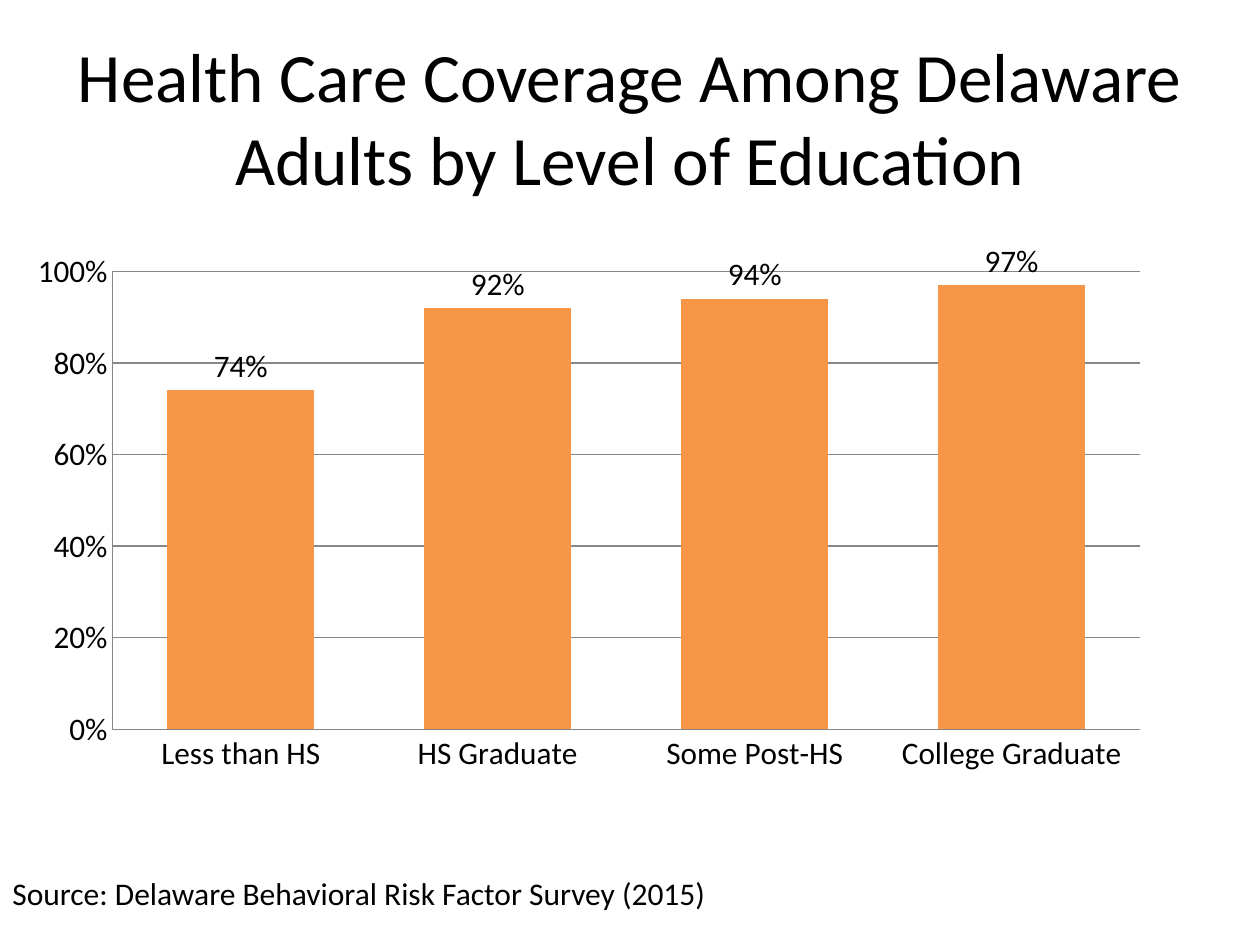
from lxml import etree
from pptx import Presentation
from pptx.chart.data import CategoryChartData
from pptx.dml.color import RGBColor
from pptx.enum.chart import XL_CHART_TYPE, XL_LABEL_POSITION, XL_TICK_MARK
from pptx.enum.text import MSO_ANCHOR, PP_ALIGN
from pptx.util import Cm, Pt

COLUMNS = XL_CHART_TYPE.COLUMN_CLUSTERED
OUTSIDE = XL_LABEL_POSITION.OUTSIDE_END
NO_TICK = XL_TICK_MARK.NONE
LEFT, CENTER = PP_ALIGN.LEFT, PP_ALIGN.CENTER
MIDDLE, BOTTOM = MSO_ANCHOR.MIDDLE, MSO_ANCHOR.BOTTOM

FONT = "Calibri"
BLACK, ORANGE, GRAY = "000000", "F79646", "878787"
COVERAGE = {
    "Less than HS": 0.74,
    "HS Graduate": 0.92,
    "Some Post-HS": 0.94,
    "College Graduate": 0.97,
}
PLOT_AREA = {"x": 0.057, "y": 0.044, "w": 0.915, "h": 0.737}


def rgb(color):
    return RGBColor.from_string(color)


def format_font(font, size, color=BLACK):
    font.name = FONT
    font.size = Pt(size)
    font.bold = False
    font.color.rgb = rgb(color)


def write_text(sp, text, size=18, color=BLACK, align=LEFT, anchor=MIDDLE):
    tf = sp.text_frame
    tf.word_wrap = True
    tf.vertical_anchor = anchor
    p = tf.paragraphs[0]
    p.alignment = align
    r = p.add_run()
    r.text = text
    format_font(r.font, size, color)


def add_title(s, text):
    sp = s.shapes.title
    sp.left, sp.top, sp.width, sp.height = Cm(1.27), Cm(0.76), Cm(22.86), Cm(3.18)
    write_text(sp, text, size=39.6, align=CENTER)


def add_source(s, text):
    sp = s.shapes.add_textbox(Cm(0), Cm(16.71), Cm(15.34), Cm(1.8))
    write_text(sp, text, anchor=BOTTOM)


def format_line(line):
    line.color.rgb = rgb(GRAY)
    line.width = Pt(0.75)


def set_plot_area(chart, area):
    """Fix the inner plot area as fractions of the chart."""
    plot_area = chart.plots[0]._element.getparent()
    ns = etree.QName(plot_area).namespace

    def add(parent, tag, val):
        etree.SubElement(parent, f"{{{ns}}}{tag}").set("val", str(val))

    for old in plot_area.findall(f"{{{ns}}}layout"):
        plot_area.remove(old)
    layout = etree.Element(f"{{{ns}}}layout")
    manual = etree.SubElement(layout, f"{{{ns}}}manualLayout")
    add(manual, "layoutTarget", "inner")
    for key in "xy":
        add(manual, f"{key}Mode", "edge")
    for key, val in area.items():
        add(manual, key, val)
    plot_area.insert(0, layout)


def add_coverage_chart(s, values):
    data = CategoryChartData(number_format="0%")
    data.categories = list(values)
    data.add_series("Series 1", list(values.values()))
    frame = s.shapes.add_chart(COLUMNS, Cm(0.76), Cm(4.88), Cm(22.86), Cm(12.57), data)
    chart = frame.chart
    chart.has_title = False
    chart.has_legend = False
    format_font(chart.font, 18)
    set_plot_area(chart, PLOT_AREA)

    # Axes
    for axis in (chart.category_axis, chart.value_axis):
        axis.major_tick_mark = axis.minor_tick_mark = NO_TICK
        format_line(axis.format.line)
    axis = chart.value_axis
    axis.minimum_scale, axis.maximum_scale, axis.major_unit = 0, 1, 0.2
    axis.tick_labels.number_format = "0%"
    axis.tick_labels.number_format_is_linked = False
    axis.has_major_gridlines = True
    format_line(axis.major_gridlines.format.line)

    # Columns and their labels
    plot = chart.plots[0]
    plot.vary_by_categories = False
    plot.gap_width, plot.overlap = 75, -25
    fill = plot.series[0].format.fill
    fill.solid()
    fill.fore_color.rgb = rgb(ORANGE)
    labels = plot.series[0].data_labels
    labels.show_value = True
    labels.position = OUTSIDE
    labels.number_format = "0%"
    labels.number_format_is_linked = False
    format_font(labels.font, 18)


def main():
    prs = Presentation()
    prs.slide_width, prs.slide_height = Cm(25.4), Cm(19.05)
    s = prs.slides.add_slide(prs.slide_layouts[5])
    add_title(s, "Health Care Coverage Among Delaware Adults by Level of Education")
    add_source(s, "Source: Delaware Behavioral Risk Factor Survey (2015)")
    add_coverage_chart(s, COVERAGE)
    prs.save("out.pptx")


if __name__ == "__main__":
    main()
